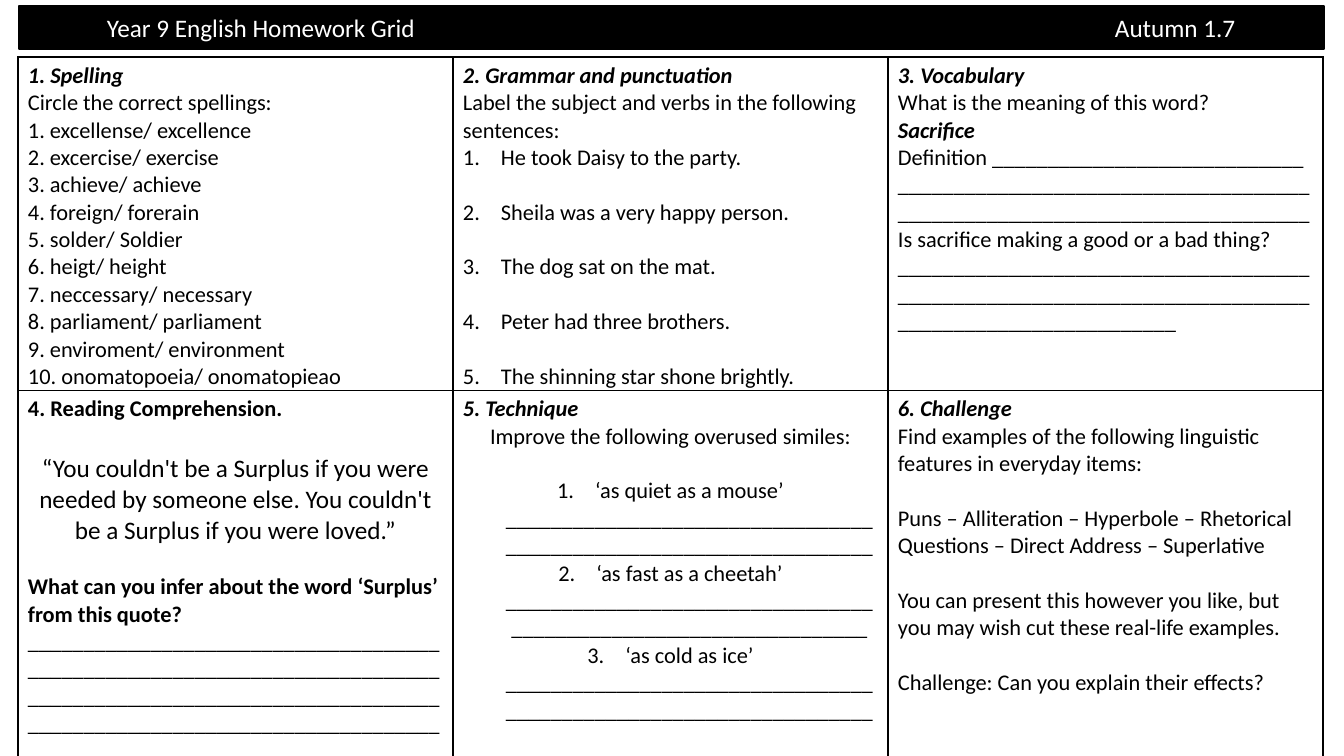
from lxml.etree import SubElement
from pptx import Presentation
from pptx.dml.color import RGBColor
from pptx.enum.shapes import MSO_SHAPE as SHAPE
from pptx.enum.text import MSO_ANCHOR as ANCHOR, PP_ALIGN as ALIGN
from pptx.oxml.ns import qn
from pptx.util import Pt

BLACK = RGBColor(0, 0, 0)
WHITE = RGBColor(255, 255, 255)
FONT = "Calibri"
LINE = 19.5
INDENT = 38


def px(n):
    return round(n * 914400 / 100.8)


def rule(n):
    return "_" * n


def para(text, **style):
    return text, style


def heading(text):
    return para(text, bold=True, italic=True)


def numbered(text, **style):
    return para(text, number=True, **style)


SPELLINGS = [
    "excellense/ excellence", "excercise/ exercise", "achieve/ achieve",
    "foreign/ forerain", "solder/ Soldier", "heigt/ height",
    "neccessary/ necessary", "parliament/ parliament",
    "enviroment/ environment", "onomatopoeia/ onomatopieao",
]
SENTENCES = [
    "He took Daisy to the party.", "Sheila was a very happy person.",
    "The dog sat on the mat.", "Peter had three brothers.",
    "The shinning star shone brightly.",
]
SIMILES = [("‘as quiet as a mouse’", 66), ("‘as fast as a cheetah’", 65),
           ("‘as cold as ice’", 66)]

SPELLING = [heading("1. Spelling"), para("Circle the correct spellings:")]
SPELLING += [para(f"{i}. {pair}") for i, pair in enumerate(SPELLINGS, 1)]

GRAMMAR = [heading("2. Grammar and punctuation"),
           para("Label the subject and verbs in the following sentences:")]
GRAMMAR += [numbered(text, before=LINE if i else 0)
            for i, text in enumerate(SENTENCES)]

VOCABULARY = [
    heading("3. Vocabulary"),
    para("What is the meaning of this word?"),
    heading("Sacrifice"),
    para(f"Definition {rule(28)} {rule(74)}"),
    para(f"Is sacrifice making a good or a bad thing?{rule(99)}"),
]

READING = [
    para("4. Reading Comprehension.", bold=True, before=2),
    para("“You couldn't be a Surplus if you were needed by someone else. "
         "You couldn't be a Surplus if you were loved.”",
         size=18, align=ALIGN.CENTER, before=22),
    para("What can you infer about the word ‘Surplus’ from this quote?",
         bold=True, before=LINE),
    para(rule(148)),
]

TECHNIQUE = [heading("5. Technique"),
             para("Improve the following overused similes:", align=ALIGN.CENTER)]
TECHNIQUE += [numbered(f"{simile} {rule(n)}", align=ALIGN.CENTER,
                       before=0 if i else LINE)
              for i, (simile, n) in enumerate(SIMILES)]

CHALLENGE = [
    heading("6. Challenge"),
    para("Find examples of the following linguistic features in everyday items:"),
    para("Puns – Alliteration – Hyperbole – Rhetorical Questions – "
         "Direct Address – Superlative", before=LINE),
    para("You can present this however you like, but you may wish cut "
         "these real-life examples.", before=LINE),
    para("Challenge: Can you explain their effects?", before=LINE),
]

TASKS = [[SPELLING, GRAMMAR, VOCABULARY], [READING, TECHNIQUE, CHALLENGE]]


def add_run(p, text, size, color, bold=False, italic=False):
    r = p.add_run()
    r.text = text
    r.font.name = FONT
    r.font.size = Pt(size)
    r.font.color.rgb = color
    r.font.bold = bold
    r.font.italic = italic


def write_para(p, text, size=16, bold=False, italic=False,
               align=ALIGN.LEFT, before=0, number=False):
    p.alignment = align
    p.space_before = Pt(before)
    if number:
        pPr = p._p.get_or_add_pPr()
        pPr.set("marL", str(px(INDENT)))
        pPr.set("indent", str(-px(INDENT)))
        SubElement(pPr, qn("a:buAutoNum"), type="arabicPeriod")
    add_run(p, text, size, BLACK, bold, italic)


def draw_border(cell):
    tcPr = cell._tc.get_or_add_tcPr()
    for side in ("lnL", "lnR", "lnT", "lnB"):
        ln = SubElement(tcPr, qn(f"a:{side}"), w=str(Pt(1)))
        fill = SubElement(ln, qn("a:solidFill"))
        SubElement(fill, qn("a:srgbClr"), val=str(BLACK))


def fill_cell(cell, paras):
    cell.margin_left = cell.margin_right = px(10)
    cell.margin_top = px(5)
    cell.margin_bottom = 0
    draw_border(cell)
    cell.fill.background()
    tf = cell.text_frame
    for i, (text, style) in enumerate(paras):
        p = tf.add_paragraph() if i else tf.paragraphs[0]
        write_para(p, text, **style)


def add_banner(s, x, y, w, h):
    sp = s.shapes.add_shape(SHAPE.RECTANGLE, px(x), px(y), px(w), px(h))
    sp.shadow.inherit = False
    sp.fill.solid()
    sp.fill.fore_color.rgb = BLACK
    sp.line.color.rgb = BLACK
    sp.line.width = Pt(1)
    tf = sp.text_frame
    tf.word_wrap = True
    tf.vertical_anchor = ANCHOR.MIDDLE
    tf.margin_left = px(88)
    p = tf.paragraphs[0]
    p.alignment = ALIGN.LEFT
    tabs = SubElement(p._p.get_or_add_pPr(), qn("a:tabLst"))
    SubElement(tabs, qn("a:tab"), pos=str(px(1008)), algn="l")
    add_run(p, "Year 9 English Homework Grid\tAutumn 1.7", 18, WHITE)


def add_task_grid(s, x, y, w, row_heights):
    cols = len(TASKS[0])
    frame = s.shapes.add_table(len(TASKS), cols, px(x), px(y),
                               px(w), px(sum(row_heights)))
    table = frame.table
    table.first_row = False
    table.horz_banding = False
    for col in table.columns:
        col.width = px(w / cols)
    for i, (height, tasks) in enumerate(zip(row_heights, TASKS)):
        table.rows[i].height = px(height)
        for j, paras in enumerate(tasks):
            fill_cell(table.cell(i, j), paras)


def main():
    prs = Presentation()
    prs.slide_width = px(1344)
    prs.slide_height = px(756)
    s = prs.slides.add_slide(prs.slide_layouts[6])
    add_banner(s, 19, 6, 1305, 43)
    add_task_grid(s, 18, 57, 1305, [333, 376])
    prs.save("out.pptx")


if __name__ == "__main__":
    main()
